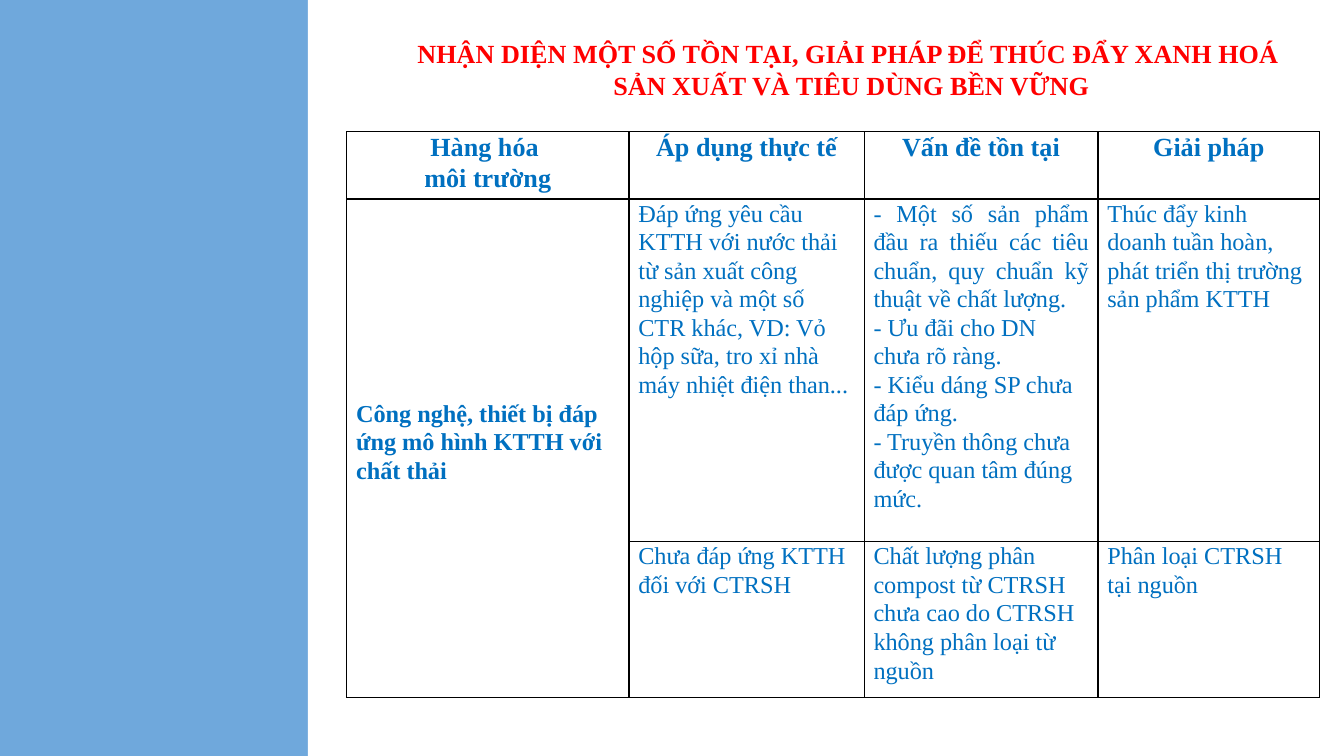
from lxml import etree
from pptx import Presentation, util as u
from pptx.dml.color import RGBColor
from pptx.enum import shapes, text
from pptx.oxml import ns

W = u.Inches(10)
H = W * 9 // 16
FONT, BLUE, RED = "Times New Roman", "0070C0", "FF0000"
MID, JUST = text.PP_ALIGN.CENTER, text.PP_ALIGN.JUSTIFY
LEFT = text.PP_ALIGN.LEFT

TITLE = ("NHẬN DIỆN MỘT SỐ TỒN TẠI, GIẢI PHÁP ĐỂ THÚC ĐẨY XANH HOÁ \n"
         "SẢN XUẤT VÀ TIÊU DÙNG BỀN VỮNG")
COLS = [2.1, 1.75, 1.74, 1.65]
ROWS = [0.5, 2.55, 1.16]
CELLS = [
    ["Hàng hóa \nmôi trường", "Áp dụng thực tế", "Vấn đề tồn tại", "Giải pháp"],
    ["Công nghệ, thiết bị đáp ứng mô hình KTTH với chất thải",
     "Đáp ứng yêu cầu KTTH với nước thải từ sản xuất công nghiệp và một số "
     "CTR khác, VD: Vỏ hộp sữa, tro xỉ nhà máy nhiệt điện than...",
     "- Một số sản phẩm đầu ra thiếu các tiêu chuẩn, quy chuẩn kỹ thuật về "
     "chất lượng.\n- Ưu đãi cho DN chưa rõ ràng.\n"
     "- Kiểu dáng SP chưa đáp ứng.\n"
     "- Truyền thông chưa được quan tâm đúng mức.",
     "Thúc đẩy kinh doanh tuần hoàn, phát triển thị trường sản phẩm KTTH"],
    ["", "Chưa đáp ứng KTTH đối với CTRSH",
     "Chất lượng phân compost từ CTRSH chưa cao do CTRSH không phân loại từ nguồn",
     "Phân loại CTRSH tại nguồn"],
]


def color(code):
    return RGBColor.from_string(code)


def write(frame, words, size, code, bold, align, lead=None):
    frame.text = words
    for para in frame.paragraphs:
        para.alignment, para.line_spacing = align, lead
        for run in para.runs:
            font = run.font
            font.name, font.size, font.bold = FONT, u.Pt(size), bold
            font.color.rgb = color(code)


def border(cell):
    """Draw a thin black line on all four sides of the cell."""
    props = cell._tc.get_or_add_tcPr()
    for i, side in enumerate(("lnL", "lnR", "lnT", "lnB")):
        line = etree.Element(ns.qn("a:" + side), w=str(u.Pt(0.75)))
        fill = etree.SubElement(line, ns.qn("a:solidFill"))
        etree.SubElement(fill, ns.qn("a:srgbClr"), val="000000")
        props.insert(i, line)


def add_panel(slide, x, y, w, h):
    panel = slide.shapes.add_shape(shapes.MSO_SHAPE.RECTANGLE, x, y, w, h)
    panel.shadow.inherit = False
    panel.fill.solid()
    panel.fill.fore_color.rgb = color("FFFFFF")
    panel.line.fill.background()
    slide.shapes.title.element.addprevious(panel.element)


def add_title(slide, x, y, w, h):
    title = slide.shapes.title
    title.left, title.top, title.width, title.height = x, y, w, h
    frame = title.text_frame
    frame.word_wrap = True
    frame.auto_size = text.MSO_AUTO_SIZE.NONE
    frame.vertical_anchor = text.MSO_ANCHOR.TOP
    write(frame, TITLE, 14, RED, True, MID)


def add_grid(slide, x, y, w, h):
    """Fill the box with a table whose tracks share it by COLS and ROWS."""
    grid = slide.shapes.add_table(len(ROWS), len(COLS), x, y, w, h).table
    grid.first_row = grid.horz_banding = False
    for col, part in zip(grid.columns, COLS):
        col.width = int(w * part / sum(COLS))
    for row, part in zip(grid.rows, ROWS):
        row.height = int(h * part / sum(ROWS))
    for r, line in enumerate(CELLS):
        for c, words in enumerate(line):
            cell = grid.cell(r, c)
            cell.margin_left = cell.margin_right = u.Inches(0.07)
            cell.margin_top = cell.margin_bottom = 0
            head = r == 0
            write(cell.text_frame, words, 14 if head else 13, BLUE,
                  head or c == 0, MID if head else LEFT, 1.07)
            cell.fill.background()
            border(cell)
    grid.cell(1, 2).text_frame.paragraphs[0].alignment = JUST
    goods = grid.cell(1, 0)
    goods.merge(grid.cell(2, 0))
    goods.vertical_anchor = text.MSO_ANCHOR.MIDDLE
    goods.margin_bottom = u.Inches(0.1)


def main():
    prs = Presentation()
    prs.slide_width, prs.slide_height = W, H
    slide = prs.slides.add_slide(prs.slide_layouts[5])
    back = slide.background.fill
    back.solid()
    back.fore_color.rgb = color("6FA8DC")
    edge = u.Inches(2.29)
    add_panel(slide, edge, 0, W - edge, H)
    add_title(slide, u.Inches(2.5), u.Inches(0.23), u.Inches(7.67), u.Inches(0.57))
    add_grid(slide, u.Inches(2.58), u.Inches(0.98),
             u.Inches(sum(COLS)), u.Inches(sum(ROWS)))
    prs.save("out.pptx")


if __name__ == "__main__":
    main()
